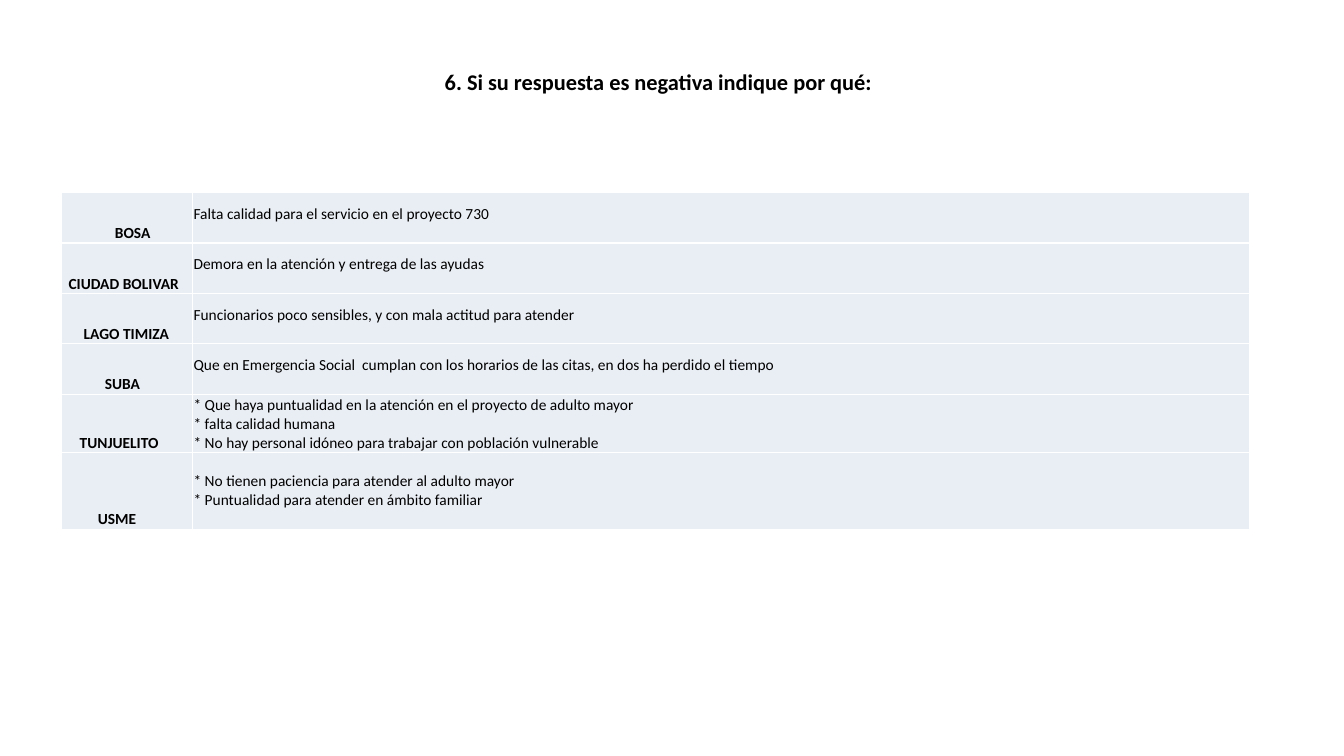
from lxml import etree
from pptx import Presentation
from pptx.dml.color import RGBColor
from pptx.enum.text import MSO_ANCHOR as ANCHOR, MSO_AUTO_SIZE as AUTO, PP_ALIGN as ALIGN
from pptx.oxml import parse_xml
from pptx.oxml.ns import nsdecls
from pptx.util import Inches, Pt

BLACK = RGBColor(0x00, 0x00, 0x00)
WHITE = RGBColor(0xFF, 0xFF, 0xFF)
PALE_BLUE = RGBColor(0xE9, 0xED, 0xF4)
FONT = "Calibri"
COLUMN_WIDTHS = (1.3, 10.48)

# locality, its indent, row height, space under the answers, answers
ROWS = [
    ("BOSA", 0.53, 0.5, 0.19,
     ["Falta calidad para el servicio en el proyecto 730"]),
    ("CIUDAD BOLIVAR", 0.07, 0.5, 0.19,
     ["Demora en la atención y entrega de las ayudas"]),
    ("LAGO TIMIZA", 0.22, 0.5, 0.19,
     ["Funcionarios poco sensibles, y con mala actitud para atender"]),
    ("SUBA", 0.43, 0.5, 0.19,
     ["Que en Emergencia Social  cumplan con los horarios de las citas, "
      "en dos ha perdido el tiempo"]),
    ("TUNJUELITO", 0.18, 0.58, 0,
     ["* Que haya puntualidad en la atención en el proyecto de adulto mayor",
      "* falta calidad humana",
      "* No hay personal idóneo para trabajar con población vulnerable"]),
    ("USME", 0.36, 0.76, 0.19,
     ["* No tienen paciencia para atender al adulto mayor",
      "* Puntualidad para atender en ámbito familiar"]),
]


def write(tf, lines, size=11, bold=False, align=ALIGN.LEFT):
    for i, line in enumerate(lines):
        p = tf.paragraphs[0] if i == 0 else tf.add_paragraph()
        p.alignment = align
        r = p.add_run()
        r.text = line
        r.font.name, r.font.size, r.font.bold = FONT, Pt(size), bold
        r.font.color.rgb = BLACK


def add_borders(cell, color, width):
    tc_pr = cell._tc.get_or_add_tcPr()
    for i, side in enumerate(("lnL", "lnR", "lnT", "lnB")):
        tc_pr.insert(i, parse_xml(
            f'<a:{side} {nsdecls("a")} w="{Pt(width)}"><a:solidFill>'
            f'<a:srgbClr val="{color}"/></a:solidFill></a:{side}>'))


def fill_cell(cell, lines, left=0.01, bottom=0, bold=False):
    cell.margin_left, cell.margin_bottom = Inches(left), Inches(bottom)
    cell.margin_right = cell.margin_top = Inches(0.01)
    cell.vertical_anchor = ANCHOR.BOTTOM
    cell.fill.solid()
    cell.fill.fore_color.rgb = PALE_BLUE
    add_borders(cell, WHITE, 1)
    write(cell.text_frame, lines, bold=bold)


def add_title(s, left, top, width, height):
    sp = s.shapes.title
    sp.left, sp.top, sp.width, sp.height = map(Inches, (left, top, width, height))
    tf = sp.text_frame
    tf.auto_size, tf.word_wrap, tf.vertical_anchor = AUTO.NONE, True, ANCHOR.MIDDLE
    write(tf, ["6. Si su respuesta es negativa indique por qué: "],
          size=16, bold=True, align=ALIGN.CENTER)


def add_answers(s, left, top):
    height = sum(row[2] for row in ROWS)
    table = s.shapes.add_table(
        len(ROWS), len(COLUMN_WIDTHS), Inches(left), Inches(top),
        Inches(sum(COLUMN_WIDTHS)), Inches(height)).table
    table.first_row = table.horz_banding = False
    for column, width in zip(table.columns, COLUMN_WIDTHS):
        column.width = Inches(width)
    for i, (locality, indent, row_height, space, answers) in enumerate(ROWS):
        table.rows[i].height = Inches(row_height)
        fill_cell(table.cell(i, 0), [locality], left=indent, bold=True)
        fill_cell(table.cell(i, 1), answers, bottom=space)


def main():
    prs = Presentation()
    prs.slide_width, prs.slide_height = Inches(13.33), Inches(7.5)
    s = prs.slides.add_slide(prs.slide_layouts[5])
    add_title(s, 3.67, 0.43, 5.77, 0.75)
    add_answers(s, 0.61, 1.91)
    prs.save("out.pptx")


if __name__ == "__main__":
    main()
